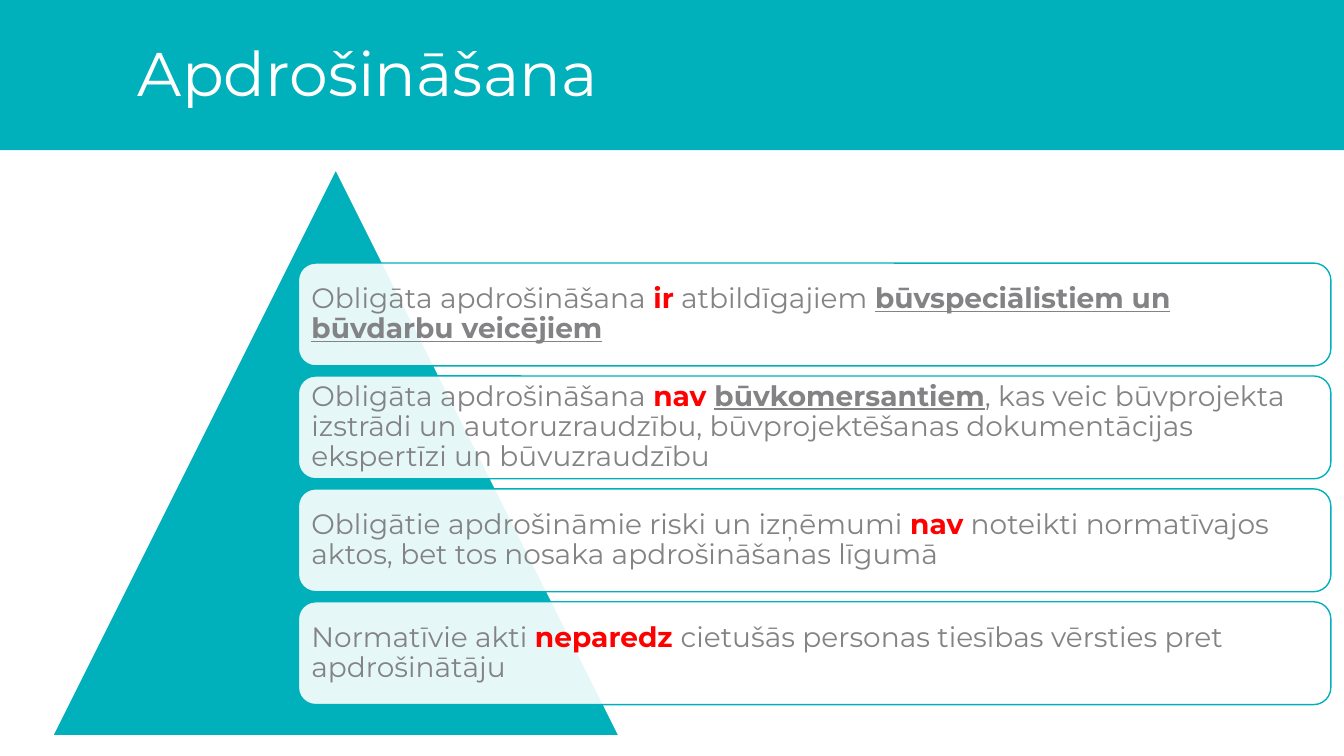
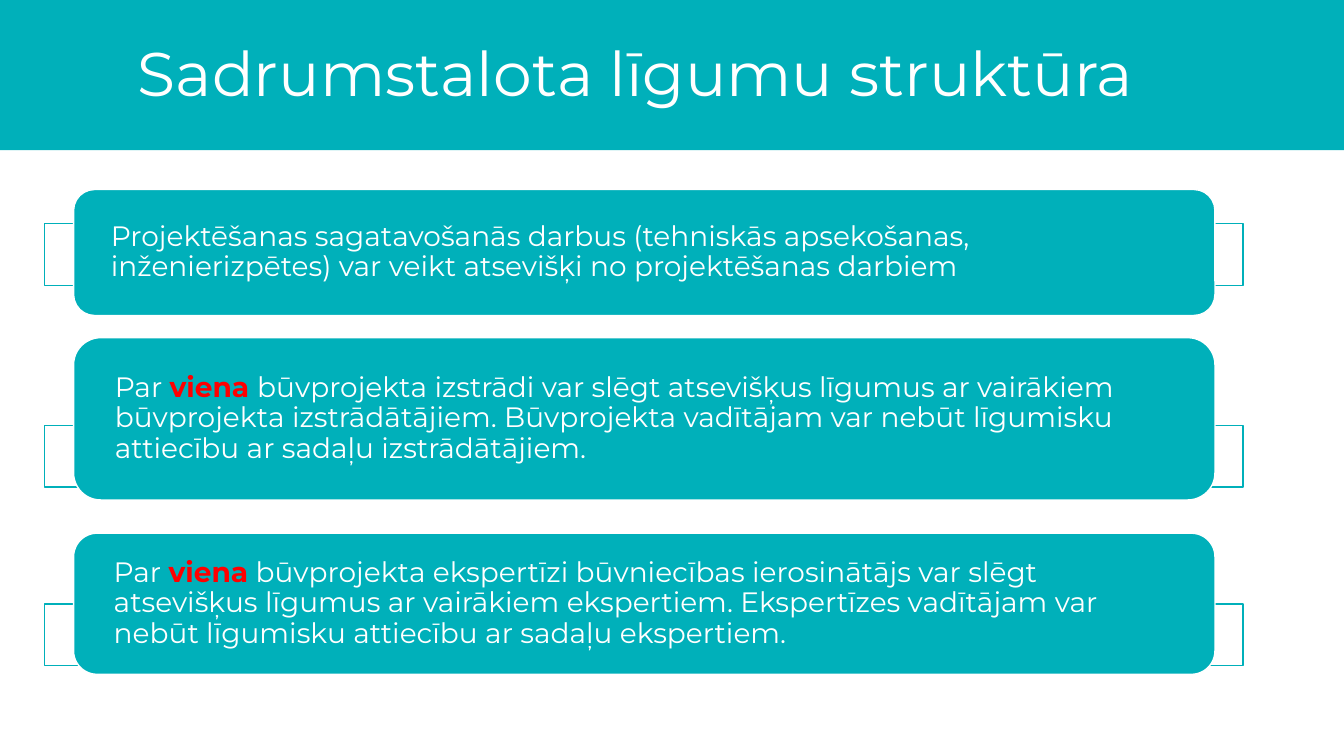
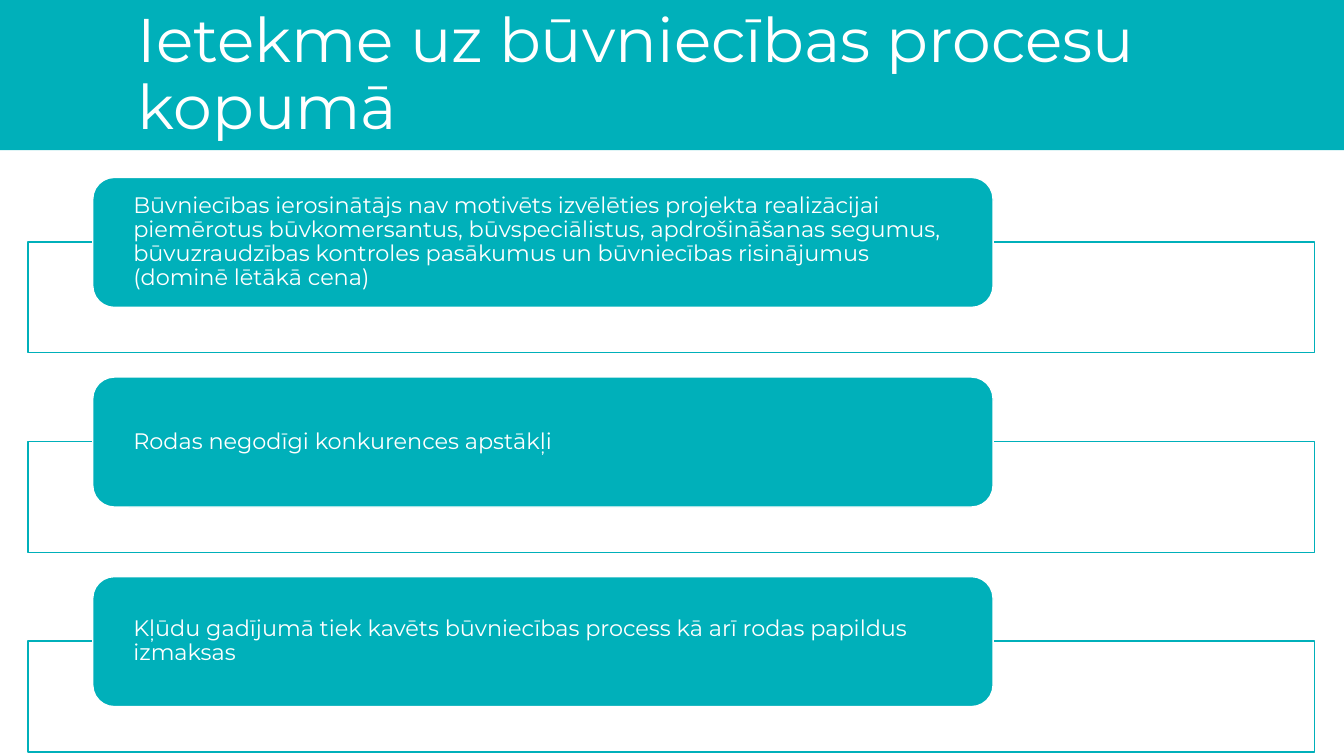
import pptx
import pptx.dml.color
import pptx.enum.shapes
import pptx.enum.text
import pptx.oxml.ns
import pptx.util
from lxml import etree

Inches = pptx.util.Inches
Pt = pptx.util.Pt
RGBColor = pptx.dml.color.RGBColor
Shape = pptx.enum.shapes.MSO_SHAPE

TEAL = RGBColor(0x00, 0xB0, 0xBA)
WHITE = RGBColor(0xFF, 0xFF, 0xFF)
GREY = RGBColor(0x83, 0x83, 0x86)
RED = RGBColor(0xFF, 0x00, 0x00)
FONT = "Montserrat"

# A text is a list of (words, style) spans.
PLAIN, ALERT, KEY = "plain", "alert", "key"

INSURANCE_TITLE = "Apdrošināšana"
INSURANCE_POINTS = [
    [("Obligāta apdrošināšana ", PLAIN), ("ir", ALERT), (" atbildīgajiem ", PLAIN),
     ("būvspeciālistiem un būvdarbu veicējiem", KEY)],
    [("Obligāta apdrošināšana ", PLAIN), ("nav ", ALERT), ("būvkomersantiem", KEY),
     (", kas veic būvprojekta izstrādi un autoruzraudzību, būvprojektēšanas "
      "dokumentācijas ekspertīzi un būvuzraudzību", PLAIN)],
    [("Obligātie apdrošināmie riski un izņēmumi ", PLAIN), ("nav", ALERT),
     (" noteikti normatīvajos aktos, bet tos nosaka apdrošināšanas līgumā", PLAIN)],
    [("Normatīvie akti ", PLAIN), ("neparedz ", ALERT),
     ("cietušās personas tiesības vērsties pret apdrošinātāju", PLAIN)],
]

CONTRACTS_TITLE = "Sadrumstalota līgumu struktūra"
# Frame top, card top, card height, text inset, text
CONTRACT_CARDS = [
    (2.22, 1.88, 1.25, 0.31,
     [("Projektēšanas sagatavošanās darbus (tehniskās apsekošanas, inženierizpētes) "
       "var veikt atsevišķi no projektēšanas darbiem", PLAIN)]),
    (4.22, 3.35, 1.61, 0.33,
     [("Par ", PLAIN), ("viena ", ALERT),
      ("būvprojekta izstrādi var slēgt atsevišķus līgumus ar vairākiem būvprojekta "
       "izstrādātājiem. Būvprojekta vadītājam var nebūt līgumisku attiecību ar "
       "sadaļu izstrādātājiem.", PLAIN)]),
    (5.99, 5.29, 1.4, 0.33,
     [("Par ", PLAIN), ("viena", ALERT),
      (" būvprojekta ekspertīzi būvniecības ierosinātājs var slēgt atsevišķus līgumus "
       "ar vairākiem ekspertiem. Ekspertīzes vadītājam var nebūt līgumisku attiecību "
       "ar sadaļu ekspertiem.", PLAIN)]),
]

IMPACT_TITLE = "Ietekme uz būvniecības procesu kopumā"
IMPACTS = [
    "Būvniecības ierosinātājs nav motivēts izvēlēties projekta realizācijai piemērotus "
    "būvkomersantus, būvspeciālistus, apdrošināšanas segumus, būvuzraudzības kontroles "
    "pasākumus un būvniecības risinājumus (dominē lētākā cena)",
    "Rodas negodīgi konkurences apstākļi",
    "Kļūdu gadījumā tiek kavēts būvniecības process kā arī rodas papildus izmaksas",
]


def add_box(page, kind, left, top, width, height, fill, line=None, opacity=None):
    """Add a preset shape, sized in inches; opacity is a percentage."""
    box = page.shapes.add_shape(kind, Inches(left), Inches(top), Inches(width), Inches(height))
    box.shadow.inherit = False
    box.fill.solid()
    box.fill.fore_color.rgb = fill
    if opacity is not None:
        color = box.fill._xPr.find(".//" + pptx.oxml.ns.qn("a:srgbClr"))
        alpha = etree.SubElement(color, pptx.oxml.ns.qn("a:alpha"))
        alpha.set("val", str(opacity * 1000))
    if line is None:
        box.line.fill.background()
    else:
        box.line.color.rgb = line
        box.line.width = Pt(1)
    return box


def write(box, spans, size, color, side_inset=0.1, end_inset=0.05):
    frame = box.text_frame
    frame.word_wrap = True
    frame.vertical_anchor = pptx.enum.text.MSO_ANCHOR.MIDDLE
    frame.margin_left = frame.margin_right = Inches(side_inset)
    frame.margin_top = frame.margin_bottom = Inches(end_inset)
    para = frame.paragraphs[0]
    para.alignment = pptx.enum.text.PP_ALIGN.LEFT
    para.line_spacing = 0.9
    for words, style in spans:
        span = para.add_run()
        span.text = words
        span.font.name = FONT
        span.font.size = Pt(size)
        span.font.color.rgb = RED if style == ALERT else color
        span.font.bold = style != PLAIN
        span.font.underline = style == KEY


def add_page(deck, title):
    """Add a blank slide with the teal band and its title."""
    page = deck.slides.add_slide(deck.slide_layouts[6])
    add_box(page, Shape.RECTANGLE, 0, -0.02, 13.33, 1.51, TEAL)
    title_box = page.shapes.add_textbox(Inches(1.27), Inches(0.03), Inches(11.5), Inches(1.45))
    write(title_box, [(title, PLAIN)], 44, WHITE)
    return page


def add_framed_card(page, frame_area, card_area, spans, size, inset):
    """Add a teal text card over an outlined frame; areas are left, top, width, height."""
    add_box(page, Shape.RECTANGLE, *frame_area, WHITE, TEAL, 90)
    card = add_box(page, Shape.ROUNDED_RECTANGLE, *card_area, TEAL, WHITE)
    write(card, spans, size, WHITE, inset, 0)


def build_insurance(deck):
    page = add_page(deck, INSURANCE_TITLE)
    add_box(page, Shape.ISOSCELES_TRIANGLE, 0.52, 1.68, 5.62, 5.62, TEAL, WHITE)
    height, gap = 1.02, 0.1
    for index, spans in enumerate(INSURANCE_POINTS):
        top = 2.61 + index * (height + gap)
        card = add_box(page, Shape.ROUNDED_RECTANGLE, 2.96, top, 10.24, height, WHITE, TEAL, 90)
        write(card, spans, 20, GREY, 0.08, 0.08)


def build_contracts(deck):
    page = add_page(deck, CONTRACTS_TITLE)
    for frame_top, card_top, card_height, inset, spans in CONTRACT_CARDS:
        add_framed_card(page, (0.44, frame_top, 11.89, 0.61),
                        (0.73, card_top, 11.32, card_height), spans, 20, inset)


def build_impact(deck):
    page = add_page(deck, IMPACT_TITLE)
    for index, words in enumerate(IMPACTS):
        top = 1.76 + index * 1.98
        add_framed_card(page, (0.28, top + 0.64, 12.76, 1.1),
                        (0.92, top, 8.93, 1.29), [(words, PLAIN)], 16, 0.34)


def main():
    deck = pptx.Presentation()
    deck.slide_width, deck.slide_height = Inches(13.33), Inches(7.5)
    build_insurance(deck)
    build_contracts(deck)
    build_impact(deck)
    deck.save("out.pptx")


if __name__ == "__main__":
    main()
